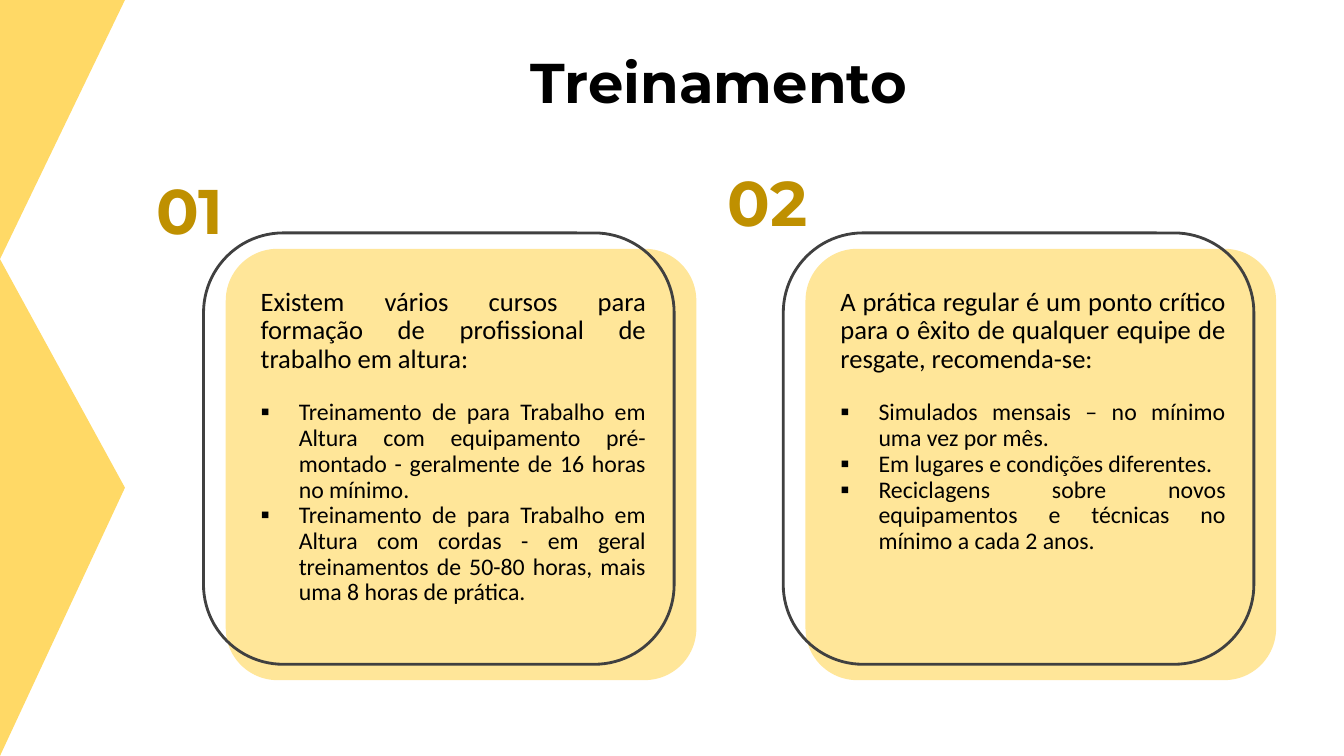
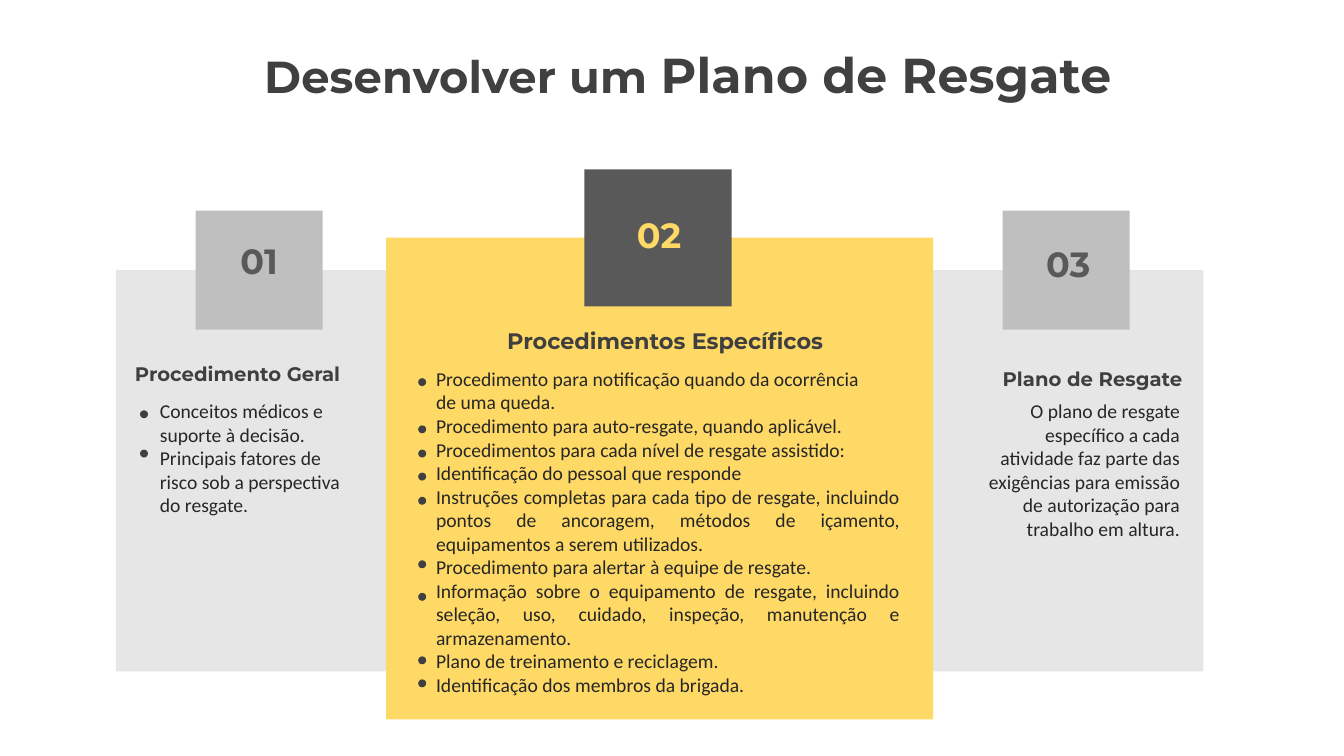
from dataclasses import dataclass

from lxml.etree import SubElement
from pptx import Presentation
from pptx.dml.color import RGBColor
from pptx.enum.shapes import MSO_SHAPE
from pptx.enum.text import PP_ALIGN
from pptx.oxml.ns import qn
from pptx.util import Cm, Pt


@dataclass(frozen=True)
class Theme:
    heading_font: str = "Montserrat"
    body_font: str = "Calibri"
    yellow: str = "FFD966"
    pale_yellow: str = "FFE699"
    gold: str = "BF9000"
    black: str = "000000"
    ink: str = "262626"
    dark: str = "404040"
    heading: str = "3F3F3F"
    slate: str = "595959"
    silver: str = "BFBFBF"
    panel: str = "E7E6E6"
    title: int = 40
    plan_title: int = 35
    plan_lead: int = 32
    card_number: int = 45
    tab_number: int = 25
    intro: int = 19
    bullet: int = 17
    main_heading: int = 16
    small: int = 14


T = Theme()


class Deck:
    def __init__(self):
        self.prs = Presentation()
        self.prs.slide_width, self.prs.slide_height = Cm(33.87), Cm(19.05)
        self.s = None

    def new_slide(self):
        self.s = self.prs.slides.add_slide(self.prs.slide_layouts[6])

    def paint(self, sp, fill=None, line=None):
        sp.shadow.inherit = False
        if fill:
            sp.fill.solid()
            sp.fill.fore_color.rgb = RGBColor.from_string(fill)
        else:
            sp.fill.background()
        if line:
            sp.line.color.rgb = RGBColor.from_string(line)
            sp.line.width = Pt(2)
        else:
            sp.line.fill.background()

    def shape(self, box, fill=None, line=None, kind=MSO_SHAPE.RECTANGLE, adj=None):
        sp = self.s.shapes.add_shape(kind, *map(Cm, box))
        if adj is not None:
            sp.adjustments[0] = adj
        self.paint(sp, fill, line)

    def polygon(self, points, fill):
        corners = [(Cm(x), Cm(y)) for x, y in points]
        builder = self.s.shapes.build_freeform(*corners[0])
        builder.add_line_segments(corners[1:], close=True)
        self.paint(builder.convert_to_shape(), fill)

    def text_box(self, box, inset=True):
        tf = self.s.shapes.add_textbox(*map(Cm, box)).text_frame
        tf.word_wrap = True
        if not inset:
            tf.margin_left = tf.margin_right = tf.margin_top = tf.margin_bottom = 0
        return tf

    def paragraph(self, tf, first, align):
        p = tf.paragraphs[0] if first else tf.add_paragraph()
        p.alignment = align
        return p

    def run(self, p, text, size, color, font=T.body_font, bold=False, spacing=None):
        r = p.add_run()
        r.text = text
        r.font.size = Pt(size)
        r.font.name = font
        r.font.bold = bold
        r.font.color.rgb = RGBColor.from_string(color)
        if spacing:
            r.font._element.set("spc", str(spacing))

    def heading(self, box, runs, color, align=PP_ALIGN.CENTER, inset=True):
        p = self.paragraph(self.text_box(box, inset), True, align)
        for text, size in runs:
            self.run(p, text, size, color, T.heading_font, True, None if inset else 10)

    def body(self, box, lines, align):
        tf = self.text_box(box)
        for i, line in enumerate(lines):
            self.run(self.paragraph(tf, i == 0, align), line, T.small, T.ink)

    def bullet(self, p):
        pPr = p._p.get_or_add_pPr()
        pPr.set("marL", str(Cm(0.96)))
        pPr.set("indent", str(-Cm(0.96)))
        SubElement(pPr, qn("a:buSzPct")).set("val", "110000")
        SubElement(pPr, qn("a:buFont")).set("typeface", "Arial")
        SubElement(pPr, qn("a:buChar")).set("char", "▪")

    def card(self, x, number, number_at, intro, items):
        rounded = MSO_SHAPE.ROUNDED_RECTANGLE
        self.shape((x, 6.27, 11.86, 10.87), T.pale_yellow, kind=rounded, adj=0.12)
        self.shape((x - 0.56, 5.87, 11.86, 10.87), line=T.dark, kind=rounded, adj=0.185)
        self.heading((*number_at, 4, 1.93), [(number, T.card_number)], T.gold,
                     PP_ALIGN.LEFT, inset=False)
        tf = self.text_box((x + 0.63, 7.14, 10.21, 8.33))
        p = self.paragraph(tf, True, PP_ALIGN.JUSTIFY)
        p.line_spacing = 0.9
        self.run(p, intro, T.intro, T.black)
        for i, item in enumerate(items):
            p = self.paragraph(tf, False, PP_ALIGN.JUSTIFY)
            self.bullet(p)
            p.line_spacing = 0.9
            if i == 0:
                p.space_before = Pt(18.5)
            self.run(p, item, T.bullet, T.black)

    def dots(self, x, tops):
        for y in tops:
            self.shape((x, y, 0.2, 0.2), T.dark, kind=MSO_SHAPE.OVAL)


def training(deck):
    deck.new_slide()
    deck.polygon([(0, 0), (3.15, 0), (0, 6.53), (3.15, 12.29), (0, 19.05)], T.yellow)
    deck.heading((6.32, 1.19, 23.6, 1.7), [("Treinamento", T.title)], T.black, inset=False)
    deck.card(5.69, "01", (3.94, 4.32),
              "Existem vários cursos para formação de profissional de trabalho em altura:",
              ["Treinamento de para Trabalho em Altura com equipamento pré-montado - "
               "geralmente de 16 horas no mínimo.",
               "Treinamento de para Trabalho em Altura com cordas - em geral treinamentos "
               "de 50-80 horas, mais uma 8 horas de prática."])
    deck.card(20.3, "02", (18.34, 4.11),
              "A prática regular é um ponto crítico para o êxito de qualquer equipe de "
              "resgate, recomenda-se:",
              ["Simulados mensais – no mínimo uma vez por mês.",
               "Em lugares e condições diferentes.",
               "Reciclagens sobre novos equipamentos e técnicas no mínimo a cada 2 anos."])


def rescue_plan(deck):
    deck.new_slide()
    for box, fill in [
        ((2.92, 6.81, 9.45, 10.11), T.panel),
        ((21.44, 6.81, 8.89, 10.11), T.panel),
        ((9.73, 5.99, 13.79, 12.14), T.yellow),
        ((14.73, 4.27, 3.71, 3.45), T.slate),
        ((4.93, 5.31, 3.2, 3), T.silver),
        ((25.27, 5.31, 3.2, 3), T.silver),
    ]:
        deck.shape(box, fill)
    deck.heading((5.54, 1.12, 23.6, 1.5),
                 [("Desenvolver um ", T.plan_lead), ("Plano de Resgate", T.plan_title)],
                 T.dark, inset=False)
    for x, y, number, color in [
        (4.93, 5.92, "01", T.slate),
        (15.01, 5.26, "02", T.yellow),
        (25.32, 5.99, "03", T.slate),
    ]:
        deck.heading((x, y, 3.2, 1.32), [(number, T.tab_number)], color)
    for x, y, text, size, align in [
        (3.15, 8.99, "Procedimento Geral", T.small, PP_ALIGN.LEFT),
        (11.71, 8.13, "Procedimentos Específicos", T.main_heading, PP_ALIGN.CENTER),
        (19.94, 9.12, "Plano de Resgate", T.small, PP_ALIGN.RIGHT),
    ]:
        deck.heading((x, y, 10.11, 0.94), [(text, size)], T.heading, align)
    deck.body((3.78, 9.93, 5.56, 4.78),
              ["Conceitos médicos e suporte à decisão.",
               "Principais fatores de risco sob a perspectiva do resgate."],
              PP_ALIGN.LEFT)
    deck.body((10.74, 9.12, 12.19, 6.32),
              ["Procedimento para notificação quando da ocorrência",
               "de uma queda.",
               "Procedimento para auto-resgate, quando aplicável.",
               "Procedimentos para cada nível de resgate assistido:",
               "Identificação do pessoal que responde",
               "Instruções completas para cada tipo de resgate, incluindo pontos de "
               "ancoragem, métodos de içamento, equipamentos a serem utilizados.",
               "Procedimento para alertar à equipe de resgate.",
               "Informação sobre o equipamento de resgate, incluindo seleção, uso, "
               "cuidado, inspeção, manutenção e armazenamento.",
               "Plano de treinamento e reciclagem.",
               "Identificação dos membros da brigada."],
              PP_ALIGN.JUSTIFY)
    deck.body((24.43, 9.93, 5.56, 4.78),
              ["O plano de resgate específico a cada atividade faz parte das "
               "exigências para emissão de autorização para trabalho em altura."],
              PP_ALIGN.RIGHT)
    deck.dots(3.53, [10.34, 11.33])
    deck.dots(10.54, [9.53, 10.72, 11.33, 11.91, 12.52, 14.12, 14.94, 16.54, 17.12])


def main():
    deck = Deck()
    training(deck)
    rescue_plan(deck)
    deck.prs.save("out.pptx")


if __name__ == "__main__":
    main()
